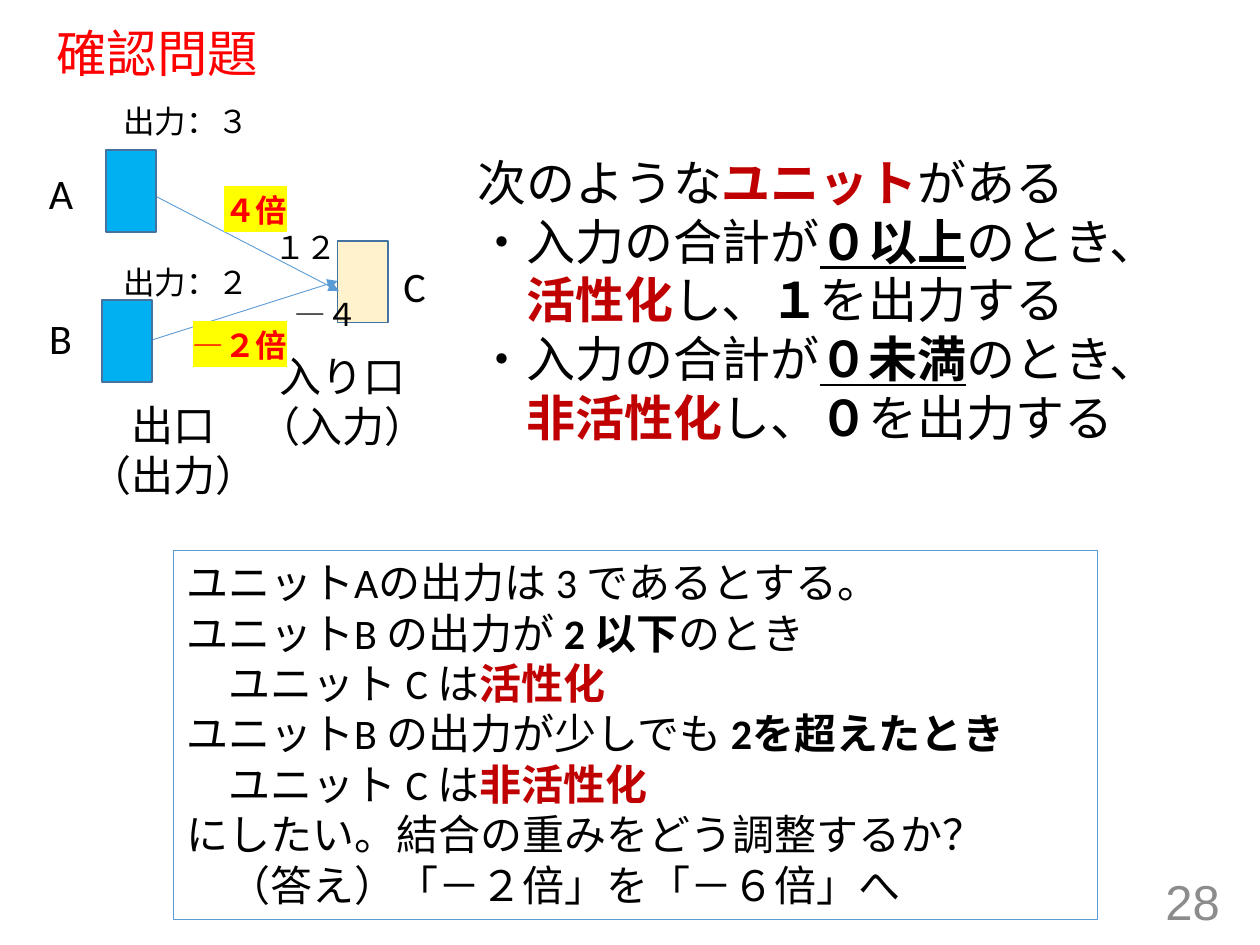
import pptx
import pptx.util
import pptx.dml.color
import pptx.enum.shapes
import pptx.enum.text
import pptx.oxml
import pptx.oxml.ns

Inches = pptx.util.Inches
Pt = pptx.util.Pt
SHAPE = pptx.enum.shapes.MSO_SHAPE
LINE = pptx.enum.shapes.MSO_CONNECTOR
ALIGN = pptx.enum.text.PP_ALIGN
ANCHOR = pptx.enum.text.MSO_ANCHOR
FIT = pptx.enum.text.MSO_AUTO_SIZE
qn = pptx.oxml.ns.qn

CJK = "Noto Sans CJK JP"
BLACK, RED, DARK, BLUE = "000000", "FF0000", "C00000", "5B9BD5"

# Run styles: (colour, bold, underline, highlight)
PLAIN = (BLACK, False, False, None)
BOLD = (BLACK, True, False, None)
UNDER = (BLACK, True, True, None)
KEY = (DARK, True, False, None)
MARK = (RED, True, False, "FFFF00")

RULES = [
    [("次のような", PLAIN), ("ユニット", KEY), ("がある", PLAIN)],
    [("・入力の合計が", PLAIN), ("０以上", UNDER), ("のとき、", PLAIN)],
    [("　", PLAIN), ("活性化", KEY), ("し、", PLAIN), ("１", BOLD), ("を出力する", PLAIN)],
    [("・入力の合計が", PLAIN), ("０未満", UNDER), ("のとき、", PLAIN)],
    [("　", PLAIN), ("非活性化", KEY), ("し、", PLAIN), ("０", BOLD), ("を出力する", PLAIN)],
]
TASK = [
    [("ユニットAの出力は 3 であるとする。", PLAIN)],
    [("ユニットB の出力が ", PLAIN), ("2 以下", BOLD), ("のとき", PLAIN)],
    [("　ユニット C は", PLAIN), ("活性化", KEY)],
    [("ユニットB の出力が少しでも ", PLAIN), ("2を超えたとき", BOLD)],
    [("　ユニット C は", PLAIN), ("非活性化", KEY)],
    [("にしたい。結合の重みをどう調整するか？", PLAIN)],
    [("　（答え）「－２倍」を「－６倍」へ", PLAIN)],
]


def color(text):
    return pptx.dml.color.RGBColor.from_string(text)


def add_run(para, text, style, size, face):
    tint, bold, under, mark = style
    run = para.add_run()
    run.text = text
    font = run.font
    font.size, font.name = Pt(size), face
    font.bold, font.underline = bold, under
    font.color.rgb = color(tint)
    props = font._element
    east = props.makeelement(qn("a:ea"), {"typeface": CJK})
    props.find(qn("a:latin")).addnext(east)
    if mark:
        light = props.makeelement(qn("a:highlight"), {})
        light.append(light.makeelement(qn("a:srgbClr"), {"val": mark}))
        props.find(qn("a:solidFill")).addnext(light)


def write(frame, lines, size, face="Calibri", align=ALIGN.LEFT):
    """Fill a text frame with lines, each a list of (text, style) runs."""
    for i, line in enumerate(lines):
        para = frame.paragraphs[0] if i == 0 else frame.add_paragraph()
        para.alignment = align
        for text, style in line:
            add_run(para, text, style, size, face)


def add_text(slide, box, lines, size, face="Calibri", align=ALIGN.LEFT,
             wrap=False, anchor=ANCHOR.TOP):
    frame = slide.shapes.add_textbox(*map(Inches, box)).text_frame
    frame.word_wrap = wrap
    frame.vertical_anchor = anchor
    frame.auto_size = FIT.NONE if wrap else FIT.SHAPE_TO_FIT_TEXT
    write(frame, lines, size, face, align)
    return frame


def add_rect(slide, box, fill, line, width):
    rect = slide.shapes.add_shape(SHAPE.RECTANGLE, *map(Inches, box))
    rect.shadow.inherit = False
    if fill:
        rect.fill.solid()
        rect.fill.fore_color.rgb = color(fill)
    else:
        rect.fill.background()
    rect.line.color.rgb = color(line)
    rect.line.width = Pt(width)
    return rect


def add_arrow(slide, start, end):
    arrow = slide.shapes.add_connector(LINE.STRAIGHT, *map(Inches, start + end))
    arrow.line.color.rgb = color(BLUE)
    arrow.line.width = Pt(0.5)
    edge = arrow.line._get_or_add_ln()
    edge.append(edge.makeelement(qn("a:tailEnd"), {"type": "triangle"}))
    props = arrow._element.spPr
    props.append(props.makeelement(qn("a:effectLst"), {}))


def add_title(slide, box):
    frame = add_text(slide, box, [[("確認問題", (RED, False, False, None))]],
                     28.8, "Lato", wrap=True, anchor=ANCHOR.MIDDLE)
    frame.paragraphs[0].line_spacing = 0.9


def add_number(slide, box):
    add_text(slide, box, [[("28", ("8C8C8C", False, False, None))]],
             28, "Arial", ALIGN.RIGHT, True, ANCHOR.MIDDLE)


def add_task(slide, box):
    rect = add_rect(slide, box, None, BLUE, 0.75)
    frame = rect.text_frame
    frame.word_wrap = True
    frame.vertical_anchor = ANCHOR.TOP
    write(frame, TASK, 24)


def add_net(slide, left, top):
    """Draw units A and B feeding unit C, with weights and labels."""
    def unit(x, y, fill):
        add_rect(slide, (left + x, top + y, 0.4, 0.65), fill, "43739E", 1)

    def arrow(x, y, to_x, to_y):
        add_arrow(slide, (left + x, top + y), (left + to_x, top + to_y))

    def label(x, y, wide, high, texts, size, style=PLAIN, align=ALIGN.LEFT):
        add_text(slide, (left + x, top + y, wide, high),
                 [[(text, style)] for text in texts], size, align=align)

    unit(2.39, 1.15, "FFF2CC")
    arrow(0.95, 0.8, 2.4, 1.55)
    label(1.65, 1.97, 1.55, 0.91, ["入り口", "（入力）"], 24, align=ALIGN.CENTER)
    arrow(0.88, 1.95, 2.39, 1.47)
    label(0.31, 2.36, 1.55, 0.91, ["出口", "（出力）"], 24, align=ALIGN.CENTER)
    unit(0.55, 0.43, "00B0F0")
    unit(0.52, 1.62, "00B0F0")
    for x, y, wide, text, style in [
        (0.59, 0, 1.21, "出力：３", PLAIN),
        (0.59, 1.28, 1.21, "出力：２", PLAIN),
        (1.39, 0.71, 0.71, "４倍", MARK),
        (1.14, 1.78, 0.96, "―２倍", MARK),
        (1.79, 1, 0.71, "１２", PLAIN),
        (1.95, 1.53, 0.71, "―４", PLAIN),
    ]:
        label(x, y, wide, 0.4, [text], 18, style)
    for x, y, name in [(0, 0.52, "A"), (0, 1.67, "B"), (2.81, 1.26, "C")]:
        label(x, y, 0.38, 0.5, [name], 24, align=ALIGN.CENTER)


def main():
    deck = pptx.Presentation()
    deck.slide_width, deck.slide_height = Inches(10), Inches(7.5)
    slide = deck.slides.add_slide(deck.slide_layouts[6])
    add_title(slide, (0.35, 0.19, 9.25, 0.51))
    add_number(slide, (7.53, 6.95, 2.25, 0.4))
    add_text(slide, (3.69, 1.16, 5.7, 2.46), RULES, 28, CJK)
    add_task(slide, (1.38, 4.37, 7.33, 2.93))
    add_net(slide, 0.29, 0.76)
    deck.save("out.pptx")


if __name__ == "__main__":
    main()
